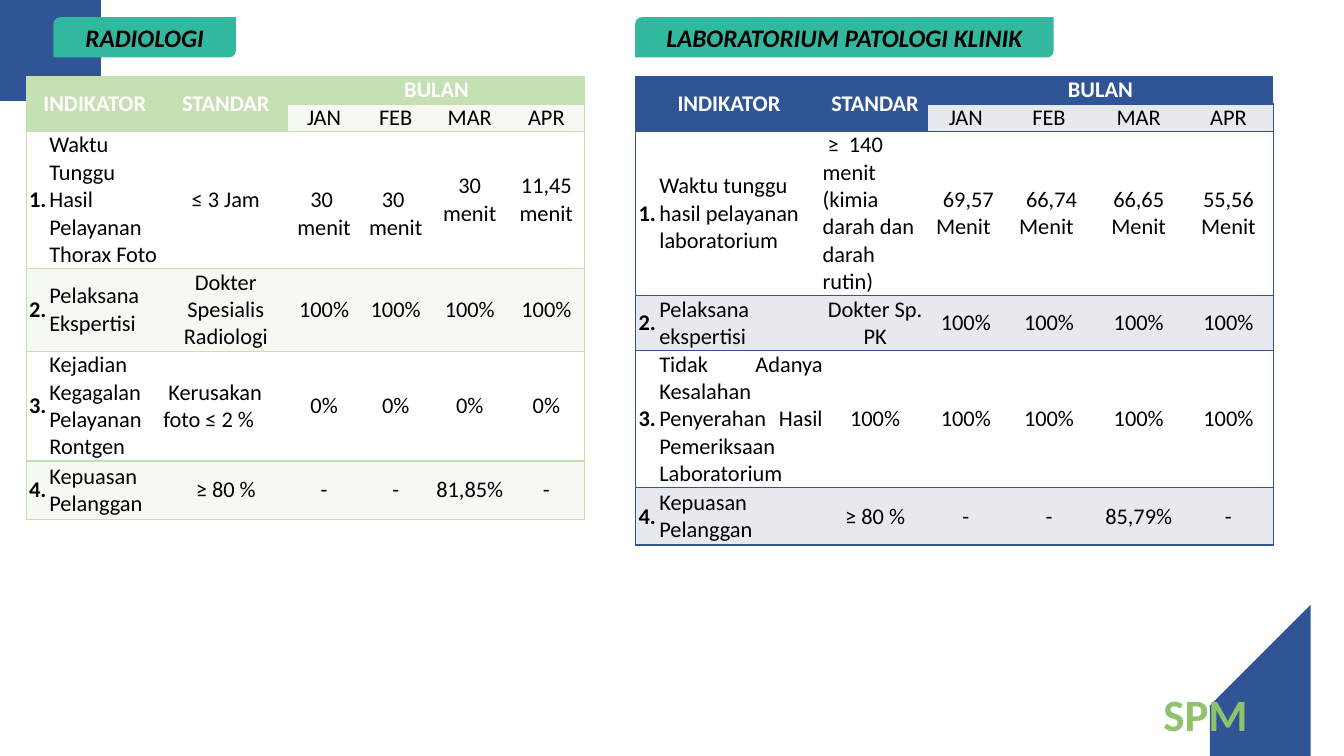
from lxml import etree
from pptx import Presentation
from pptx import util as u
from pptx.dml.color import RGBColor
from pptx.enum import shapes, text
from pptx.oxml import ns

BLUE = RGBColor(0x2F, 0x55, 0x97)
PALE_BLUE = RGBColor(0xE8, 0xE9, 0xEF)
GREEN = RGBColor(0xC5, 0xE0, 0xB3)
PALE_GREEN = RGBColor(0xF5, 0xF9, 0xF2)
TEAL = RGBColor(0x32, 0xB8, 0x9E)
SPM_GREEN = RGBColor(0x8E, 0xC3, 0x6B)
BLACK = RGBColor(0, 0, 0)
WHITE = RGBColor(255, 255, 255)

CENTER = text.PP_ALIGN.CENTER
LEFT = text.PP_ALIGN.LEFT
JUSTIFY = text.PP_ALIGN.JUSTIFY
LINE_HEIGHT = 0.27
MONTHS = ["JAN", "FEB", "MAR", "APR"]

RADIOLOGY = [
    ["Waktu Tunggu Hasil Pelayanan Thorax Foto", "≤ 3 Jam",
     "30 \nmenit", "30 \nmenit", "30 menit", "11,45 menit"],
    ["Pelaksana Ekspertisi", "Dokter Spesialis Radiologi"] + ["100%"] * 4,
    ["Kejadian Kegagalan Pelayanan Rontgen", " Kerusakan foto ≤ 2 %"] + ["0%"] * 4,
    ["Kepuasan Pelanggan", "≥ 80 %", "-", "-", "81,85%", "-"],
]
LABORATORY = [
    ["Waktu tunggu hasil pelayanan laboratorium",
     " ≥  140 menit\n(kimia darah dan darah rutin)",
     " 69,57 Menit ", " 66,74 Menit ", "66,65 Menit", "55,56 Menit"],
    ["Pelaksana ekspertisi", "Dokter Sp. PK"] + ["100%"] * 4,
    ["Tidak Adanya Kesalahan Penyerahan Hasil Pemeriksaan Laboratorium"] + ["100%"] * 5,
    ["Kepuasan Pelanggan", "≥ 80 %", "-", "-", "85,79%", "-"],
]


def curve_points(start, control1, control2, end, steps=24):
    """Return points along a cubic curve, both ends included."""
    points = []
    for step in range(steps + 1):
        t = step / steps
        weights = ((1 - t) ** 3, 3 * t * (1 - t) ** 2, 3 * t * t * (1 - t), t ** 3)
        points.append(tuple(
            sum(weight * point[axis] for weight, point
                in zip(weights, (start, control1, control2, end)))
            for axis in (0, 1)))
    return points


class SlideBuilder:
    font = "Calibri"
    table_size = 16

    def __init__(self, slide):
        self.slide = slide

    def add_text(self, frame, content, size, color, align=LEFT, bold=False, italic=False):
        for index, line in enumerate(content.split("\n")):
            paragraph = frame.paragraphs[0] if index == 0 else frame.add_paragraph()
            paragraph.alignment = align
            run = paragraph.add_run()
            run.text = line
            run.font.name = self.font
            run.font.size = u.Pt(size)
            run.font.color.rgb = color
            run.font.bold = bold
            run.font.italic = italic

    def corner(self, points):
        builder = self.slide.shapes.build_freeform(
            *points[0], scale=u.Inches(1))
        builder.add_line_segments(points[1:], close=True)
        shape = builder.convert_to_shape()
        shape.shadow.inherit = False
        shape.fill.solid()
        shape.fill.fore_color.rgb = BLUE
        shape.line.fill.background()

    def heading(self, left, width, content):
        shape = self.slide.shapes.add_shape(
            shapes.MSO_SHAPE.ROUND_2_DIAG_RECTANGLE,
            u.Inches(left), u.Inches(0.17), u.Inches(width), u.Inches(0.4))
        shape.shadow.inherit = False
        shape.fill.solid()
        shape.fill.fore_color.rgb = TEAL
        shape.line.fill.background()
        shape.text_frame.vertical_anchor = text.MSO_ANCHOR.MIDDLE
        self.add_text(shape.text_frame, content, 18, BLACK, CENTER, bold=True, italic=True)

    def label(self, left, top, width, height, content):
        box = self.slide.shapes.add_textbox(
            u.Inches(left), u.Inches(top), u.Inches(width), u.Inches(height))
        box.text_frame.word_wrap = True
        self.add_text(box.text_frame, content, 32, SPM_GREEN, bold=True)

    def borders(self, cell, color, sides):
        """Draw the given sides (from L, R, T, B) and clear the others."""
        properties = cell._tc.get_or_add_tcPr()
        for side in "LRTB":
            line = etree.SubElement(properties, ns.qn(f"a:ln{side}"), w=str(u.Pt(1)))
            if side in sides:
                fill = etree.SubElement(line, ns.qn("a:solidFill"))
                etree.SubElement(fill, ns.qn("a:srgbClr"), val=str(color))
            else:
                etree.SubElement(line, ns.qn("a:noFill"))

    def cell(self, cell, content, fill, color=BLACK, align=CENTER, bold=False):
        cell.fill.solid()
        cell.fill.fore_color.rgb = fill
        cell.margin_left = cell.margin_right = cell.margin_top = cell.margin_bottom = 0
        cell.vertical_anchor = text.MSO_ANCHOR.MIDDLE
        if content:
            self.add_text(cell.text_frame, content, self.table_size, color, align, bold)

    def indicator_table(self, left, widths, heights, indicators, main, band, left_cells):
        """Add a table; left_cells lists the (row, column) places aligned left."""
        frame = self.slide.shapes.add_table(
            len(heights), len(widths), u.Inches(left), u.Inches(0.76),
            u.Inches(sum(widths)), u.Inches(sum(heights)))
        table = frame.table
        table.first_row = table.horz_banding = False
        for column, width in zip(table.columns, widths):
            column.width = u.Inches(width)
        for row, height in zip(table.rows, heights):
            row.height = u.Inches(height)

        rows = [["INDIKATOR", "", "STANDAR", "BULAN", "", "", ""],
                ["", "", ""] + MONTHS]
        rows += [[f"{number}."] + values for number, values in enumerate(indicators, 1)]
        last = len(widths) - 1
        for r, row in enumerate(rows):
            for c, content in enumerate(row):
                cell = table.cell(r, c)
                sides = "TB" + ("L" if c == 0 else "") + ("R" if c == last else "")
                self.borders(cell, main, sides)
                if r == 0 or (r == 1 and c < 3):
                    self.cell(cell, content, main, WHITE, bold=True)
                    continue
                align = JUSTIFY if c == 1 else CENTER
                if (r, c) in left_cells:
                    align = LEFT
                self.cell(cell, content, band if r % 2 else WHITE,
                          align=align, bold=c == 0)
        table.cell(0, 0).merge(table.cell(1, 1))
        table.cell(0, 2).merge(table.cell(1, 2))
        table.cell(0, 3).merge(table.cell(0, last))
        return table


def main():
    presentation = Presentation()
    presentation.slide_width = u.Inches(13.33)
    presentation.slide_height = u.Inches(7.5)
    slide = presentation.slides.add_slide(presentation.slide_layouts[6])
    builder = SlideBuilder(slide)

    builder.corner([(13.33, 7.5), (12.11, 7.5)]
                   + curve_points((12.04, 7.36), (11.9, 7.06), (12.03, 6.69), (12.34, 6.55))
                   + [(13.32, 6.09)])
    builder.corner([(0, 0), (1.22, 0)]
                   + curve_points((1.29, 0.15), (1.43, 0.46), (1.29, 0.83), (0.99, 0.97))
                   + [(0, 1.42)])

    radiology = builder.indicator_table(
        0.26, [0.23, 1.13, 1.24, 0.71, 0.71, 0.76, 0.76],
        [LINE_HEIGHT, LINE_HEIGHT, 1.36, 0.82, 1.09, 0.58],
        RADIOLOGY, GREEN, PALE_GREEN, {(4, 2)})
    for column in (3, 4):
        waiting_time = radiology.cell(2, column)
        waiting_time.vertical_anchor = text.MSO_ANCHOR.BOTTOM
        waiting_time.margin_bottom = u.Inches(LINE_HEIGHT)
    builder.indicator_table(
        6.3, [0.24, 1.62, 1.04, 0.76, 0.89, 0.89, 0.89],
        [LINE_HEIGHT, LINE_HEIGHT, 1.63, 0.54, 1.36, 0.57],
        LABORATORY, BLUE, PALE_BLUE, {(2, 1), (2, 2)})

    builder.heading(0.53, 1.81, "RADIOLOGI")
    builder.heading(6.3, 4.15, "LABORATORIUM PATOLOGI KLINIK")
    builder.label(11.44, 6.76, 1.18, 0.64, "SPM")
    presentation.save("out.pptx")


if __name__ == "__main__":
    main()
